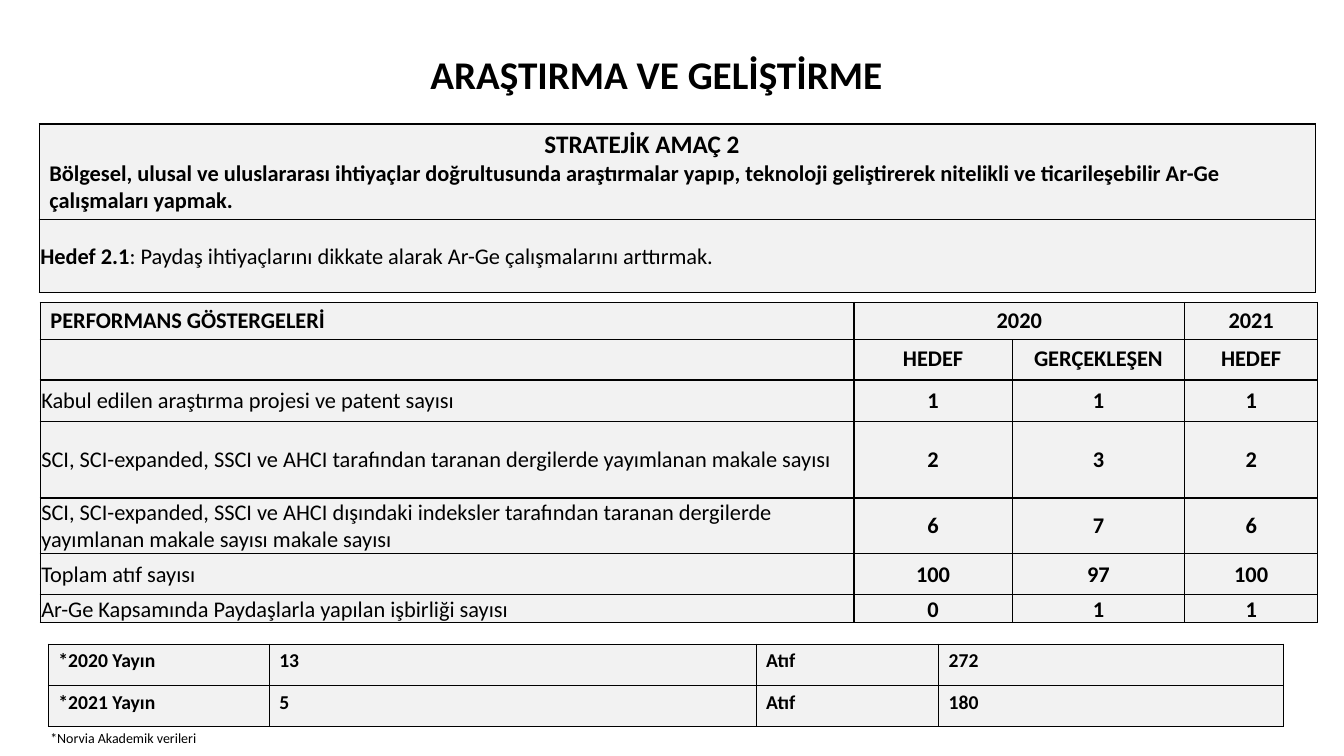
from lxml import etree
from pptx import Presentation
from pptx.dml.color import RGBColor
from pptx.enum.text import MSO_ANCHOR, PP_ALIGN
from pptx.oxml.ns import qn
from pptx.util import Emu, Pt

PX = 9144  # 100 px to the inch
FONT = "Calibri"
COLORS = {"ink": "000000", "cell": "F2F2F2"}
LEFT, CENTER = PP_ALIGN.LEFT, PP_ALIGN.CENTER
MIDDLE, BOTTOM = MSO_ANCHOR.MIDDLE, MSO_ANCHOR.BOTTOM

INDICATORS = [
    ("Kabul edilen araştırma projesi ve patent sayısı", "1", "1", "1"),
    ("SCI, SCI-expanded, SSCI ve AHCI tarafından taranan dergilerde yayımlanan makale sayısı",
     "2", "3", "2"),
    ("SCI, SCI-expanded, SSCI ve AHCI dışındaki indeksler tarafından taranan dergilerde "
     "yayımlanan makale sayısı makale sayısı", "6", "7", "6"),
    ("Toplam atıf sayısı", "100", "97", "100"),
    ("Ar-Ge Kapsamında Paydaşlarla yapılan işbirliği sayısı", "0", "1", "1"),
]
PUBLICATIONS = [
    ("*2020 Yayın", "13", "Atıf", "272"),
    ("*2021 Yayın", "5", "Atıf", "180"),
]


def px(value):
    return Emu(value * PX)


def add_span(para, text, size, bold=False):
    span = para.add_run()
    span.text = text
    span.font.name = FONT
    span.font.size = Pt(size)
    span.font.bold = bold
    span.font.color.rgb = RGBColor.from_string(COLORS["ink"])


def add_label(page, box, text, size, bold, align, anchor):
    frame = page.shapes.add_textbox(*map(px, box)).text_frame
    frame.word_wrap = True
    frame.vertical_anchor = anchor
    frame.paragraphs[0].alignment = align
    add_span(frame.paragraphs[0], text, size, bold)


def style_cell(cell):
    properties = cell._tc.get_or_add_tcPr()
    for side in ("a:lnL", "a:lnR", "a:lnT", "a:lnB"):
        line = etree.SubElement(properties, qn(side), w=str(Pt(1)))
        fill = etree.SubElement(line, qn("a:solidFill"))
        etree.SubElement(fill, qn("a:srgbClr"), val=COLORS["ink"])
    cell.fill.solid()
    cell.fill.fore_color.rgb = RGBColor.from_string(COLORS["cell"])


def add_grid(page, left, top, widths, heights):
    table = page.shapes.add_table(len(heights), len(widths), px(left), px(top),
                                  px(sum(widths)), px(sum(heights))).table
    table.first_row = table.horz_banding = False
    for column, width in zip(table.columns, widths):
        column.width = px(width)
    for row, height in zip(table.rows, heights):
        row.height = px(height)
    for cell in table.iter_cells():
        style_cell(cell)
    return table


def make_tight(cell):
    cell.vertical_anchor = MIDDLE
    cell.margin_left = cell.margin_right = cell.margin_top = px(1)
    cell.margin_bottom = 0


def write_cell(cell, text, size, bold=True, align=LEFT):
    para = cell.text_frame.paragraphs[0]
    para.alignment = align
    if text:
        add_span(para, text, size, bold)


def add_goal_table(page, left, top):
    table = add_grid(page, left, top, [1266], [95, 72])

    # Strategic aim, with its heading indented
    frame = table.cell(0, 0).text_frame
    heading = frame.paragraphs[0]
    heading._p.get_or_add_pPr().set("marL", str(px(491)))
    add_span(heading, "STRATEJİK AMAÇ 2", 18, True)
    add_span(frame.add_paragraph(),
             "Bölgesel, ulusal ve uluslararası ihtiyaçlar doğrultusunda araştırmalar yapıp, "
             "teknoloji geliştirerek nitelikli ve ticarileşebilir Ar-Ge çalışmaları yapmak.",
             16, True)

    # Target
    target = table.cell(1, 0)
    make_tight(target)
    para = target.text_frame.paragraphs[0]
    add_span(para, "Hedef 2.1", 16, True)
    add_span(para, ": Paydaş ihtiyaçlarını dikkate alarak Ar-Ge çalışmalarını arttırmak.", 16)


def add_indicator_table(page, left, top):
    table = add_grid(page, left, top, [807, 157, 171, 132], [37, 40, 41, 76, 55, 41, 28])
    table.cell(0, 1).merge(table.cell(0, 2))
    headers = [("PERFORMANS GÖSTERGELERİ", "2020", "", "2021"),
               ("", "HEDEF", "GERÇEKLEŞEN", "HEDEF")]
    for r, row in enumerate(headers + INDICATORS):
        is_header = r < len(headers)
        for c, text in enumerate(row):
            cell = table.cell(r, c)
            if not is_header:
                make_tight(cell)
            write_cell(cell, text, 16, is_header or c > 0, CENTER if c else LEFT)


def add_publication_table(page, left, top):
    table = add_grid(page, left, top, [219, 483, 181, 342], [41, 41])
    for r, row in enumerate(PUBLICATIONS):
        for c, text in enumerate(row):
            write_cell(table.cell(r, c), text, 14)


def main():
    deck = Presentation()
    deck.slide_width, deck.slide_height = px(1333), px(750)
    page = deck.slides.add_slide(deck.slide_layouts[6])
    add_label(page, (76, 26, 1150, 95), "ARAŞTIRMA VE GELİŞTİRME", 28, True, CENTER, MIDDLE)
    add_indicator_table(page, 40, 300)
    add_goal_table(page, 39, 123)
    add_label(page, (40, 701, 198, 44), "*Norvia Akademik verileri", 10, False, LEFT, BOTTOM)
    add_publication_table(page, 48, 639)
    deck.save("out.pptx")


if __name__ == "__main__":
    main()
